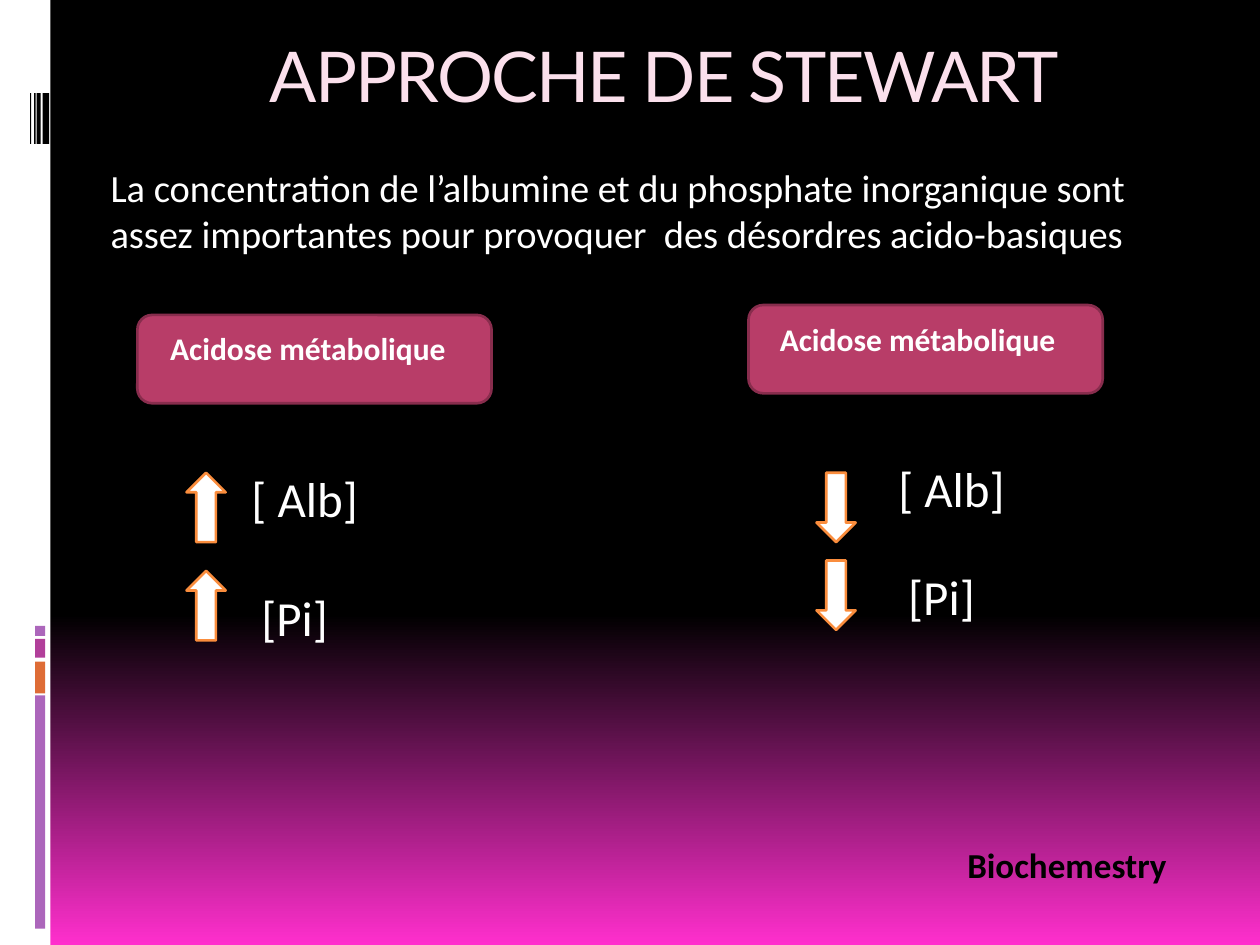
from pptx import Presentation
from pptx.dml.color import RGBColor
from pptx.enum.shapes import MSO_SHAPE as Shape
from pptx.enum.text import MSO_ANCHOR as Anchor, PP_ALIGN as Align
from pptx.util import Cm, Pt

COLORS = {
    "black": "000000", "white": "FFFFFF", "pink": "FF2FCD", "title": "FBE0EC",
    "violet": "AC66BB", "orange": "DE6C36", "magenta": "B13F9A",
    "rose": "B83D68", "rose edge": "882D4D", "arrow edge": "FA8D3D",
}

TITLE = "APPROCHE DE STEWART"
INTRO = ("La concentration de l’albumine et du phosphate inorganique sont "
         "assez importantes pour provoquer  des désordres acido-basiques")
FOOTER = "Biochemestry"

# Lengths below are in centimetres.
STRIP_WIDTH, PAGE_HEIGHT = 1.02, 19.05
STRIP_BLOCKS = [  # top, height, colour
    (14.02, 4.7, "violet"), (13.34, 0.64, "orange"),
    (12.88, 0.38, "magenta"), (12.62, 0.2, "violet"),
]
BARCODE = [(0.86, 0.13), (0.74, 0.08), (0.69, 0.03), (0.61, 0.02)]  # left, width

COLUMNS = [
    {
        "heading": "Acidose métabolique", "box": (2.77, 6.35), "label": (3.18, 6.5),
        "arrow": Shape.UP_ARROW, "arrow_left": 3.76, "arrow_tops": (9.53, 11.51),
        "ions": [("[ Alb]", 4.82, 9.32), ("[Pi]", 5.02, 11.71)],
    },
    {
        "heading": "Acidose métabolique", "box": (15.09, 6.15), "label": (15.47, 6.32),
        "arrow": Shape.DOWN_ARROW, "arrow_left": 16.46, "arrow_tops": (9.53, 11.3),
        "ions": [("[ Alb]", 17.86, 9.12), ("[Pi]", 18.06, 11.3)],
    },
]


def rgb(name):
    return RGBColor.from_string(COLORS[name])


def write(frame, text, color="white", **font_format):
    para = frame.paragraphs[0]
    span = para.add_run()
    span.text = text
    span.font.color.rgb = rgb(color)
    for name, value in font_format.items():
        setattr(span.font, name, value)
    return para, span


def add_block(page, kind, left, top, width, height, fill, edge=None):
    block = page.shapes.add_shape(kind, Cm(left), Cm(top), Cm(width), Cm(height))
    block.shadow.inherit = False
    block.fill.solid()
    block.fill.fore_color.rgb = rgb(fill)
    if edge:
        block.line.color.rgb = rgb(edge)
        block.line.width = Pt(1.5)
    else:
        block.line.fill.background()


def add_text(page, text, left, top, width, height, size, **font_format):
    box = page.shapes.add_textbox(Cm(left), Cm(top), Cm(width), Cm(height))
    box.text_frame.word_wrap = True
    write(box.text_frame, text, size=Pt(size), name="Calibri", **font_format)


def paint_background(page):
    fill = page.background.fill
    fill.gradient()
    fill.gradient_angle = 270
    for stop, (position, color) in zip(fill.gradient_stops, [(0.65, "black"), (1, "pink")]):
        stop.position = position
        stop.color.rgb = rgb(color)


def add_side_strip(page):
    add_block(page, Shape.RECTANGLE, 0, 0, STRIP_WIDTH, PAGE_HEIGHT, "white")
    for top, height, color in STRIP_BLOCKS:
        add_block(page, Shape.RECTANGLE, 0.71, top, 0.2, height, color)
    for left, width in BARCODE:
        add_block(page, Shape.RECTANGLE, left, 1.88, width, 1.02, "black")


def add_title(page):
    title = page.shapes.title
    place = {"left": 2.59, "top": 0.41, "width": 21.59, "height": 2.18}
    for name, value in place.items():
        setattr(title, name, Cm(value))
    title.text_frame.vertical_anchor = Anchor.MIDDLE
    para, span = write(title.text_frame, TITLE, "title", size=Pt(40), name="Lato")
    para.alignment = Align.CENTER
    span.font._element.set("spc", "-100")


def add_column(page, column):
    add_block(page, Shape.ROUNDED_RECTANGLE, *column["box"], 7.14, 1.78, "rose", "rose edge")
    add_text(page, column["heading"], *column["label"], 7.54, 1.02, 18, bold=True)
    for top in column["arrow_tops"]:
        add_block(page, column["arrow"], column["arrow_left"], top, 0.79, 1.4,
                  "white", "arrow edge")
    for text, left, top in column["ions"]:
        add_text(page, text, left, top, 3.38, 1.45, 28)


def main():
    deck = Presentation()
    deck.slide_width, deck.slide_height = Cm(25.4), Cm(PAGE_HEIGHT)
    page = deck.slides.add_slide(deck.slide_layouts.get_by_name("Title Only"))
    paint_background(page)
    add_side_strip(page)
    add_title(page)
    add_text(page, INTRO, 1.98, 3.18, 22.63, 2.13, 22)
    for column in COLUMNS:
        add_column(page, column)
    add_text(page, FOOTER, 19.25, 16.87, 4.95, 1.12, 20, color="black", bold=True)
    deck.save("out.pptx")


if __name__ == "__main__":
    main()
